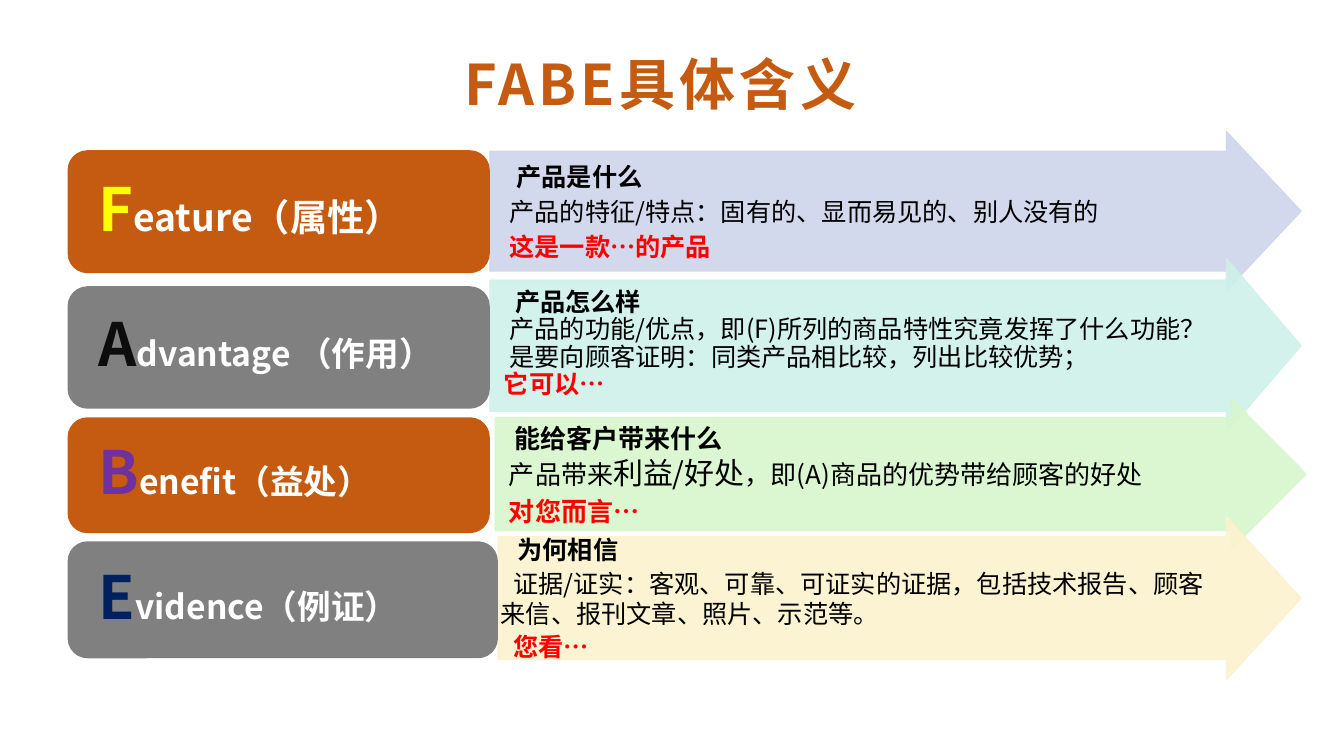
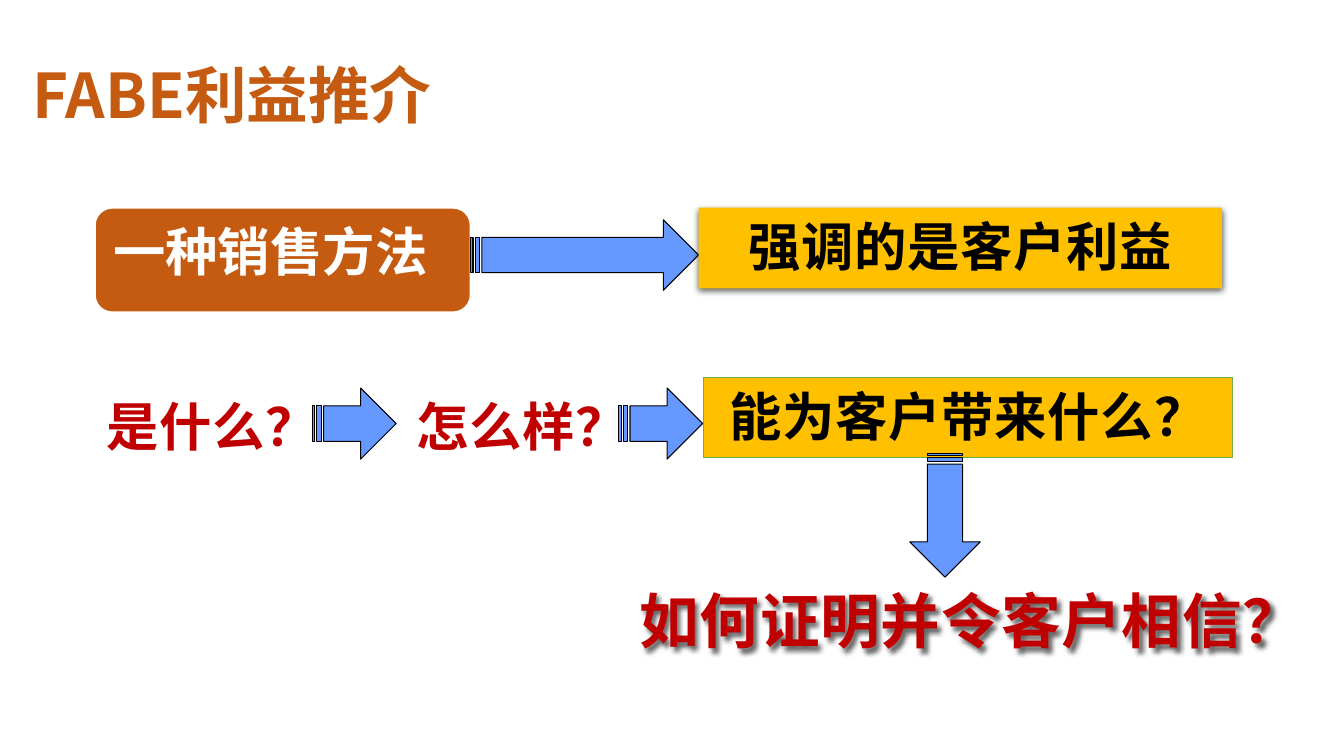
import pptx
import pptx.dml.color
import pptx.enum.shapes
import pptx.enum.text
import pptx.oxml.ns
import pptx.util
from lxml import etree

RGBColor = pptx.dml.color.RGBColor
Pt = pptx.util.Pt
SHAPE = pptx.enum.shapes.MSO_SHAPE
ALIGN = pptx.enum.text.PP_ALIGN
ANCHOR = pptx.enum.text.MSO_ANCHOR
qn = pptx.oxml.ns.qn

ORANGE = RGBColor(0xC5, 0x5A, 0x11)
GRAY = RGBColor(0x80, 0x80, 0x80)
WHITE = RGBColor(0xFF, 0xFF, 0xFF)
BLACK = RGBColor(0, 0, 0)
YELLOW = RGBColor(0xFF, 0xFF, 0)
CHARCOAL = RGBColor(0x0D, 0x0D, 0x0D)
PURPLE = RGBColor(0x70, 0x30, 0xA0)
NAVY = RGBColor(0, 0x20, 0x60)
RED = RGBColor(0xFF, 0, 0)
DARK_RED = RGBColor(0xC0, 0, 0)
GOLD = RGBColor(0xFF, 0xC0, 0)
GREEN = RGBColor(0x70, 0xAD, 0x47)
BLUE = RGBColor(0x66, 0x99, 0xFF)
PALE_BLUE = RGBColor(0xCF, 0xD5, 0xEA)
PALE_TEAL = RGBColor(0xCE, 0xF1, 0xE9)
PALE_GREEN = RGBColor(0xD7, 0xF7, 0xCE)
PALE_YELLOW = RGBColor(0xFC, 0xF2, 0xCE)

FONT = "Noto Sans CJK SC"
LABEL_LEFT = 5.03
HEAD_LENGTH = 5.59
SHAFT_SHARE = 0.75
CARD_INSETS = (9.6, 4.8, 9.6, 4.8)


class Deck:
    def __init__(self):
        self.presentation = pptx.Presentation()
        self.presentation.slide_width = pptx.util.Inches(13.33)
        self.presentation.slide_height = pptx.util.Inches(7.5)
        self.slide = None

    def x(self, percent):
        return round(self.presentation.slide_width * percent / 100)

    def y(self, percent):
        return round(self.presentation.slide_height * percent / 100)

    def box(self, left, top, width, height):
        return self.x(left), self.y(top), self.x(width), self.y(height)

    def run(self, paragraph, text, size, color, bold=True, spacing=0):
        run = paragraph.add_run()
        run.text = text
        run.font.size = Pt(size)
        run.font.bold = bold
        run.font.color.rgb = color
        run.font.name = FONT
        properties = run._r.get_or_add_rPr()
        etree.SubElement(properties, qn("a:ea"), typeface=FONT)
        if spacing:
            properties.set("spc", str(round(spacing * 100)))

    def frame(self, shape, insets, anchor, wrap=True):
        frame = shape.text_frame
        frame.auto_size = pptx.enum.text.MSO_AUTO_SIZE.NONE
        frame.word_wrap = wrap
        frame.vertical_anchor = anchor
        (frame.margin_left, frame.margin_top,
         frame.margin_right, frame.margin_bottom) = map(Pt, insets)
        return frame

    def title(self, text, position, size, align, spacing=0):
        layout = self.presentation.slide_layouts.get_by_name("Title Only")
        self.slide = self.presentation.slides.add_slide(layout)
        shape = self.slide.shapes.title
        shape.left, shape.top, shape.width, shape.height = self.box(*position)
        frame = self.frame(shape, (7.2, 3.6, 7.2, 3.6), ANCHOR.MIDDLE)
        paragraph = frame.paragraphs[0]
        paragraph.alignment = align
        paragraph.line_spacing = 0.9
        self.run(paragraph, text, size, ORANGE, spacing=spacing)

    def shape(self, kind, position, fill, line=None, line_width=0.5):
        shape = self.slide.shapes.add_shape(kind, *self.box(*position))
        shape.shadow.inherit = False
        shape.fill.solid()
        shape.fill.fore_color.rgb = fill
        if line is None:
            shape.line.fill.background()
        else:
            shape.line.color.rgb = line
            shape.line.width = Pt(line_width)
        return shape

    def shadow(self, shape, blur, distance, angle, opacity):
        shape.shadow.inherit = False
        effects = shape._element.spPr.find(qn("a:effectLst"))
        shadow = etree.SubElement(
            effects, qn("a:outerShdw"), blurRad=str(Pt(blur)),
            dist=str(Pt(distance)), dir=str(angle * 60000), algn="ctr", rotWithShape="0")
        color = etree.SubElement(shadow, qn("a:srgbClr"), val=str(BLACK))
        etree.SubElement(color, qn("a:alpha"), val=str(opacity * 1000))

    def label(self, position, fill, initial, initial_color, rest, size):
        shape = self.shape(SHAPE.ROUNDED_RECTANGLE, position, fill)
        shape.adjustments[0] = self.x(1.48) / shape.height
        frame = self.frame(shape, (18, 13, 18, 13), ANCHOR.MIDDLE)
        paragraph = frame.paragraphs[0]
        paragraph.alignment = ALIGN.LEFT
        paragraph.line_spacing = 0.9
        self.run(paragraph, initial, 42.6, initial_color)
        self.run(paragraph, rest, size, WHITE)

    def explanation(self, position, fill, pitch, lines):
        shape = self.shape(SHAPE.RIGHT_ARROW, position, fill, fill)
        shape.adjustments[0] = SHAFT_SHARE
        shape.adjustments[1] = self.x(HEAD_LENGTH) / shape.height
        for color in shape._element.spPr.iter(qn("a:srgbClr")):
            etree.SubElement(color, qn("a:alpha"), val="90000")
        frame = self.frame(shape, (2, 0, 21, 0), ANCHOR.MIDDLE)
        for index, (indent, runs) in enumerate(lines):
            paragraph = frame.add_paragraph() if index else frame.paragraphs[0]
            paragraph.alignment = ALIGN.LEFT
            paragraph.line_spacing = Pt(pitch)
            paragraph.space_after = Pt(2.7 if index < len(lines) - 1 else 0)
            paragraph._p.get_or_add_pPr().set("indent", str(Pt(indent)))
            for text, size, color, bold in runs:
                self.run(paragraph, text, size, color, bold)

    def card(self, kind, position, text, fill, color, align=ALIGN.CENTER,
             line=None, line_width=0.5, spacing=0.5):
        shape = self.shape(kind, position, fill, line, line_width)
        self.caption(shape, text, 37.4, color, align, spacing)
        return shape

    def question(self, position, text, size=37.4):
        shape = self.slide.shapes.add_textbox(*self.box(*position))
        self.caption(shape, text, size, DARK_RED, wrap=False)
        return shape

    def caption(self, shape, text, size, color, align=ALIGN.CENTER, spacing=0.5, wrap=True):
        paragraph = self.frame(shape, CARD_INSETS, ANCHOR.TOP, wrap).paragraphs[0]
        paragraph.alignment = align
        self.run(paragraph, text, size, color, spacing=spacing)

    def striped_arrow(self, position, rotation=0):
        shape = self.shape(SHAPE.STRIPED_RIGHT_ARROW, position, BLUE, BLACK, 0.75)
        shape.rotation = rotation


def heading(text, size=18):
    return [(text, size, BLACK, True)]


def body(text, size=18):
    return [(text, size, BLACK, False)]


def pitch_line(text, size=18):
    return [(text, size, RED, True)]


def meaning_slide(deck):
    deck.title("FABE具体含义", (18, 5.73, 62.25, 11.6), 40, ALIGN.CENTER, 3)
    rows = [
        ((19.87, 31.42, 16.27), (ORANGE, "F", YELLOW, "eature（属性）", 26.6),
         (36.45, 17.33, 60.38, 21.2), PALE_BLUE, 22.3,
         [(17, heading("产品是什么")),
          (12, body("产品的特征/特点：固有的、显而易见的、别人没有的")),
          (12, pitch_line("这是一款…的产品"))]),
        ((37.87, 31.42, 16.2), (GRAY, "A", CHARCOAL, "dvantage （作用）", 24),
         (36.45, 34.13, 60.38, 23.2), PALE_TEAL, 17,
         [(16, heading("产品怎么样")),
          (12, body("产品的功能/优点，即(F)所列的商品特性究竟发挥了什么功能？")),
          (12, body("是要向顾客证明：同类产品相比较，列出比较优势；")),
          (8, pitch_line("它可以…"))]),
        ((55.2, 31.42, 15.33), (ORANGE, "B", PURPLE, "enefit（益处）", 24),
         (36.83, 52.67, 60.38, 20.07), PALE_GREEN, 23.5,
         [(12, heading("能给客户带来什么", 18.6)),
          (8, body("产品带来", 18.6) + body("利益/好处", 21.4)
           + body("，即(A)商品的优势带给顾客的好处", 18.6)),
          (8, pitch_line("对您而言…", 18.6))]),
        ((71.6, 32.02, 15.47), (GRAY, "E", NAVY, "vidence（例证）", 24),
         (37.05, 68.27, 59.78, 21.73), PALE_YELLOW, 21.4,
         [(12, heading("为何相信")),
          (9, body("证据/证实：客观、可靠、可证实的证据，包括技术报告、"
                   "顾客来信、报刊文章、照片、示范等。")),
          (9, pitch_line("您看…"))]),
    ]
    for (top, width, height), label, arrow_place, fill, pitch, lines in rows:
        deck.explanation(arrow_place, fill, pitch, lines)
        deck.label((LABEL_LEFT, top, width, height), *label)


def benefit_slide(deck):
    deck.title("FABE利益推介", (1.65, 4.67, 90, 16.67), 44, ALIGN.LEFT)
    deck.card(SHAPE.ROUNDED_RECTANGLE, (7.05, 27.47, 27.98, 13.87), "一种销售方法",
              ORANGE, WHITE, ALIGN.LEFT, WHITE, 1.5, 0)
    deck.striped_arrow((35.03, 29.07, 16.95, 9.33))
    emphasis = deck.card(SHAPE.RECTANGLE, (51.98, 27.47, 38.93, 10.67),
                         "强调的是客户利益", GOLD, BLACK)
    deck.shadow(emphasis, 4.5, 1.5, 90, 63)
    for text, left, arrow_left in (("是什么？", 6.9, 23.25), ("怎么样？", 30, 46.05)):
        deck.question((left, 51.2, 17.78, 10.67), text)
        deck.striped_arrow((arrow_left, 51.33, 6.23, 9.4))
    deck.card(SHAPE.RECTANGLE, (52.35, 49.87, 39.38, 10.67), "能为客户带来什么？",
              GOLD, BLACK, line=GREEN)
    deck.striped_arrow((65.7, 63.47, 9.23, 9.33), 90)
    proof = deck.question((46.5, 76.4, 51.53, 12), "如何证明并令客户相信？", 42.6)
    deck.shadow(proof, 3, 3, 45, 60)


def main():
    deck = Deck()
    meaning_slide(deck)
    benefit_slide(deck)
    deck.presentation.save("out.pptx")


if __name__ == "__main__":
    main()
